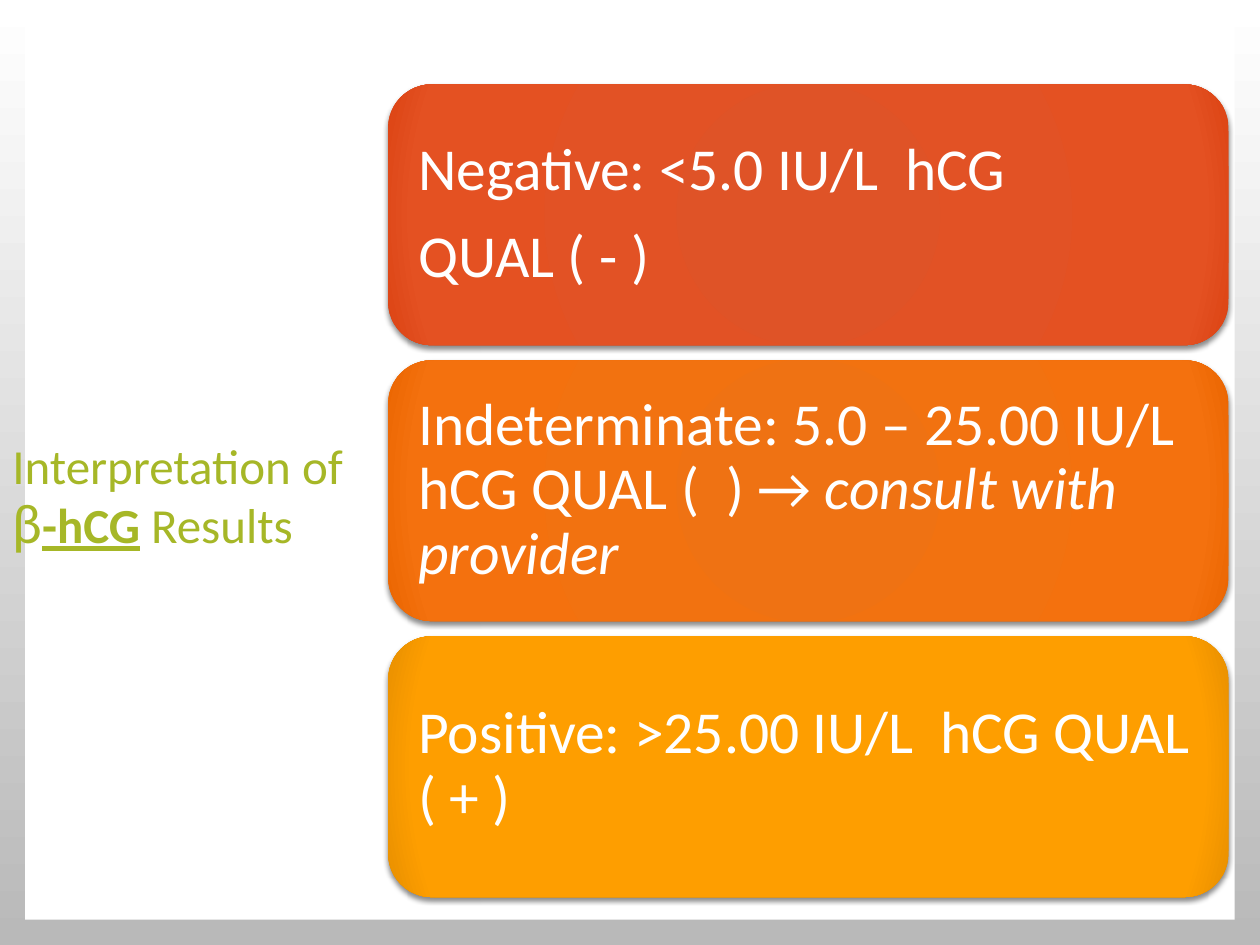
from lxml import etree
from pptx import Presentation
from pptx.dml.color import RGBColor
from pptx.enum.shapes import MSO_SHAPE
from pptx.enum.text import MSO_ANCHOR, PP_ALIGN
from pptx.oxml import parse_xml
from pptx.util import Inches, Pt

RECT, ROUND = MSO_SHAPE.RECTANGLE, MSO_SHAPE.ROUNDED_RECTANGLE
MIDDLE, LEFT = MSO_ANCHOR.MIDDLE, PP_ALIGN.LEFT
WHITE = RGBColor(0xFF, 0xFF, 0xFF)
GRAY = RGBColor(0xB9, 0xB9, 0xB9)
GREEN = RGBColor(0xA6, 0xB7, 0x27)
FONT = "Calibri"
NS = "http://schemas.openxmlformats.org/drawingml/2006/main"

# Content: each paragraph is a list of (text, size, style) runs
TITLE = [("Interpretation of ", 28, ""), ("\n", 28, ""), ("β", 32, ""),
         ("-hCG", 28, "bu"), (" Results", 28, "")]
CARDS = [
    (("DF5327", "E45122", "DB4313"),
     [[("Negative: <5.0 IU/L  hCG", 34, "")], [("QUAL ( - )", 34, "")]]),
    (("EF7213", "F4710E", "EA6500"),
     [[("Indeterminate: 5.0 – 25.00 IU/L hCG QUAL (  ) → ", 34, ""),
       ("consult with provider", 34, "i")]]),
    (("FE9E00", "FE9E00", "E78F00"),
     [[("Positive: >25.00 IU/L  hCG QUAL ( + )", 34, "")]]),
]

# Layout in inches
WIDE, HIGH, EDGE = 10, 7.5, 0.2
CARD_X, CARD_W, CARD_H = 3.08, 6.67, 2.07
TOP, STEP = 0.67, 2.19
INSET = 0.14


def write(frame, paras, color, after=0):
    frame.word_wrap = True
    frame.vertical_anchor = MIDDLE
    for i, runs in enumerate(paras):
        para = frame.add_paragraph() if i else frame.paragraphs[0]
        para.alignment = LEFT
        para.line_spacing = 0.9
        para.space_after = Pt(after)
        for text, size, style in runs:
            if text == "\n":
                para.add_line_break()
                continue
            run = para.add_run()
            run.text = text
            font = run.font
            font.name, font.size = FONT, Pt(size)
            font.color.rgb = color
            font.bold, font.italic = "b" in style, "i" in style
            font.underline = "u" in style


def glow(shape, colors):
    """Radial fill, darker at the rim, and a soft shadow below."""
    stops = "".join(
        f'<a:gs pos="{pos}000"><a:srgbClr val="{c}"/></a:gs>'
        for pos, c in zip((0, 90, 100), colors))
    fill = parse_xml(
        f'<a:gradFill xmlns:a="{NS}" rotWithShape="1"><a:gsLst>{stops}</a:gsLst>'
        '<a:path path="circle"><a:fillToRect l="100000" t="100000" '
        'r="100000" b="100000"/></a:path></a:gradFill>')
    shape.line.fill.background()
    props = shape.fill._xPr
    props.find(f"{{{NS}}}prstGeom").addnext(fill)
    shade = etree.SubElement(
        props.find(f"{{{NS}}}effectLst"), f"{{{NS}}}outerShdw",
        blurRad=str(Pt(3)), dist=str(Pt(2)), dir="5400000", rotWithShape="0")
    black = etree.SubElement(shade, f"{{{NS}}}srgbClr", val="000000")
    etree.SubElement(black, f"{{{NS}}}alpha", val="45000")


def add_box(slide, kind, *place):
    shape = slide.shapes.add_shape(kind, *map(Inches, place))
    shape.shadow.inherit = False
    return shape


def main():
    prs = Presentation()
    prs.slide_width, prs.slide_height = Inches(WIDE), Inches(HIGH)
    slide = prs.slides.add_slide(prs.slide_layouts[6])

    # Gray frame fading down, with a white page on it
    back = slide.background.fill
    back.gradient()
    back.gradient_angle = 270
    for stop, color in zip(back.gradient_stops, (WHITE, GRAY)):
        stop.color.rgb = color
    page = add_box(slide, RECT, EDGE, EDGE, WIDE - 2 * EDGE, HIGH - 2 * EDGE)
    page.fill.solid()
    page.fill.fore_color.rgb = WHITE
    page.line.fill.background()

    # Title at the left
    title = slide.shapes.add_textbox(
        0, Inches(TOP), Inches(WIDE / 3), Inches(6.58))
    write(title.text_frame, [TITLE], GREEN)

    # One card per result
    for i, (colors, paras) in enumerate(CARDS):
        card = add_box(slide, ROUND, CARD_X, TOP + i * STEP, CARD_W, CARD_H)
        glow(card, colors)
        frame = card.text_frame
        frame.margin_left = frame.margin_right = Inches(INSET)
        frame.margin_top = frame.margin_bottom = Inches(INSET)
        write(frame, paras, WHITE, after=13)

    prs.save("out.pptx")


if __name__ == "__main__":
    main()
